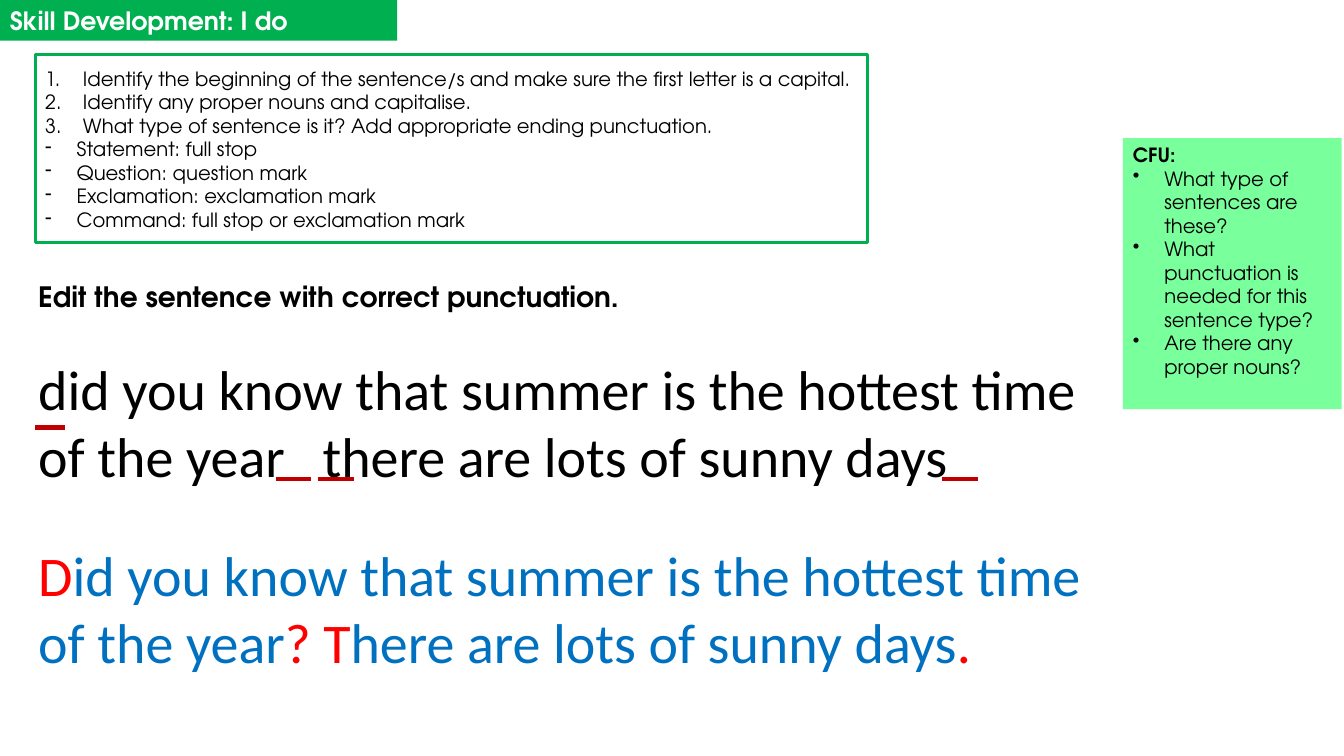
from lxml import etree
from pptx import Presentation
from pptx.dml.color import RGBColor
from pptx.enum.shapes import MSO_CONNECTOR, MSO_SHAPE
from pptx.enum.text import MSO_ANCHOR, PP_ALIGN
from pptx.oxml.ns import qn
from pptx.util import Pt

RECT = MSO_SHAPE.RECTANGLE
LINE = MSO_CONNECTOR.STRAIGHT
TOP = MSO_ANCHOR.TOP
LEFT = PP_ALIGN.LEFT

BLACK, WHITE, GREEN, MINT = "000000", "FFFFFF", "00B050", "79FF9C"
BLUE, RED, DARK = "0070C0", "FF0000", "C00000"
HEAD, BODY = "TeX Gyre Adventor", "Calibri"

NOTE = {"name": HEAD, "size": Pt(14), "bold": False}
LABEL = {**NOTE, "bold": True}
TITLE = {**LABEL, "size": Pt(18)}
TASK = {**LABEL, "size": Pt(20)}
PROSE = {"name": BODY, "size": Pt(40), "bold": False}

STEPS = [
    "Identify the beginning of the sentence/s and make sure the first letter is a capital.",
    "Identify any proper nouns and capitalise.",
    "What type of sentence is it? Add appropriate ending punctuation.",
]
TYPES = [
    "Statement: full stop",
    "Question: question mark",
    "Exclamation: exclamation mark",
    "Command: full stop or exclamation mark",
]
CHECKS = [
    "What type of sentences are these?",
    "What punctuation is needed for this sentence type?",
    "Are there any proper nouns?",
]
ANSWER = [
    ("D", RED),
    ("id you know that summer is the hottest time of the year", BLUE),
    ("? T", RED),
    ("here are lots of sunny days", BLUE),
    (".", RED),
]
BLANKS = [(25.2, 305.3, 20.9), (197.3, 342, 25.2),
          (227.5, 342, 25.2), (673.2, 342, 25.2)]


def paint(part, color):
    """Give a fill or a line's fill one solid colour."""
    part.solid()
    part.fore_color.rgb = RGBColor.from_string(color)


def add_box(slide, area, fill=None, edge=None):
    box = slide.shapes.add_shape(RECT, *map(Pt, area))
    box.shadow.inherit = False
    if fill:
        paint(box.fill, fill)
    else:
        box.fill.background()
    if edge:
        paint(box.line.fill, edge)
        box.line.width = Pt(2)
    else:
        box.line.fill.background()
    return set_frame(box)


def add_text(slide, area):
    return set_frame(slide.shapes.add_textbox(*map(Pt, area)))


def set_frame(shape):
    frame = shape.text_frame
    frame.word_wrap = True
    frame.vertical_anchor = TOP
    return frame


def add_para(frame, runs, style):
    """Fill the empty first paragraph, or add one, with (text, colour) runs."""
    first = frame.paragraphs[0]
    para = frame.add_paragraph() if first.runs else first
    para.alignment = LEFT
    for text, color in runs:
        run = para.add_run()
        run.text = text
        for key, value in style.items():
            setattr(run.font, key, value)
        paint(run.font.fill, color)
    return para


def add_list(frame, items, indent, tag, **mark):
    for item in items:
        props = add_para(frame, [(item, BLACK)], NOTE)._p.get_or_add_pPr()
        props.set("marL", str(Pt(indent)))
        props.set("indent", str(Pt(-indent)))
        etree.SubElement(props, qn(tag), mark)


def add_blank(slide, left, top, width):
    line = slide.shapes.add_connector(
        LINE, Pt(left), Pt(top), Pt(left + width), Pt(top))
    paint(line.line.fill, DARK)
    line.line.width = Pt(3)
    etree.SubElement(line._element.spPr, qn("a:effectLst"))


def main():
    deck = Presentation()
    deck.slide_width, deck.slide_height = Pt(960), Pt(540)
    slide = deck.slides.add_slide(deck.slide_layouts[6])

    prompt = add_text(slide, (20.2, 249.8, 759.6, 104.4))
    para = add_para(prompt, [
        ("did you know that summer is the hottest time of the year", BLACK),
        (" ", BLACK),
        ("there are lots of sunny days", BLACK)], PROSE)
    # Widen the one space to leave room for the missing mark
    para.runs[1].font._element.set("spc", "1800")

    answer = add_text(slide, (20.2, 382.3, 781.2, 104.4))
    add_para(answer, ANSWER, PROSE)

    title = add_box(slide, (0, 0, 283.7, 29), GREEN)
    add_para(title, [("Skill Development: I do", WHITE)], TITLE)

    check = add_box(slide, (802.1, 98.6, 156.2, 193.7), MINT)
    add_para(check, [("CFU:", BLACK)], LABEL)
    add_list(check, CHECKS, 22.5, "a:buChar", char="•")

    add_box(slide, (25.2, 38.9, 594.7, 134.6), edge=GREEN)
    steps = add_text(slide, (25.2, 43.9, 594.7, 140.4))
    add_list(steps, STEPS, 27, "a:buAutoNum", type="arabicPeriod")
    add_list(steps, TYPES, 22.5, "a:buChar", char="-")

    task = add_text(slide, (20.2, 198.7, 932.4, 36.7))
    para = add_para(
        task, [("Edit the sentence with correct punctuation.", BLACK)], TASK)
    para.line_spacing = 0.9

    for blank in BLANKS:
        add_blank(slide, *blank)
    deck.save("out.pptx")


if __name__ == "__main__":
    main()
